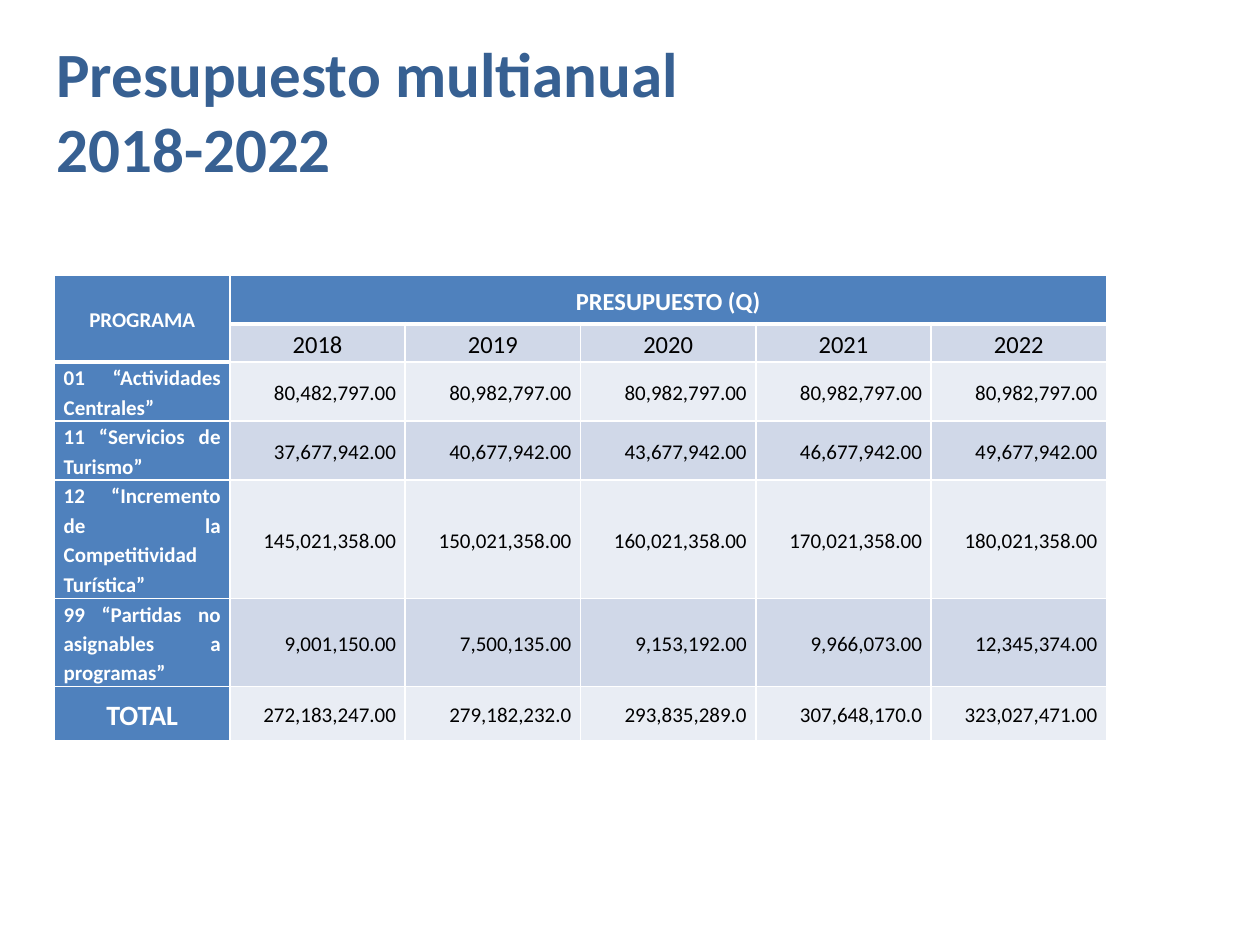
from pptx import Presentation
from pptx.dml.color import RGBColor
from pptx.enum.text import MSO_ANCHOR, PP_ALIGN
from pptx.oxml.ns import qn
from pptx.util import Pt
from lxml import etree

MIDDLE, TOP = MSO_ANCHOR.MIDDLE, MSO_ANCHOR.TOP
CENTER, RIGHT, JUSTIFY = PP_ALIGN.CENTER, PP_ALIGN.RIGHT, PP_ALIGN.JUSTIFY

FONT = "Calibri"
NAVY = RGBColor(0x37, 0x60, 0x92)
BLUE = RGBColor(0x4F, 0x81, 0xBD)
BAND_DARK = RGBColor(0xD0, 0xD8, 0xE8)
BAND_LIGHT = RGBColor(0xE9, 0xED, 0xF4)
WHITE = RGBColor(0xFF, 0xFF, 0xFF)
BLACK = RGBColor(0, 0, 0)

YEARS = ["2018", "2019", "2020", "2021", "2022"]
PROGRAMS = [
    ("01 “Actividades Centrales”", ["80,482,797.00"] + ["80,982,797.00"] * 4),
    ("11 “Servicios de Turismo”",
     ["37,677,942.00", "40,677,942.00", "43,677,942.00", "46,677,942.00", "49,677,942.00"]),
    ("12 “Incremento de la Competitividad Turística”",
     ["145,021,358.00", "150,021,358.00", "160,021,358.00", "170,021,358.00", "180,021,358.00"]),
    ("99 “Partidas no asignables a programas”",
     ["9,001,150.00", "7,500,135.00", "9,153,192.00", "9,966,073.00", "12,345,374.00"]),
    ("TOTAL",
     ["272,183,247.00", "279,182,232.0", "293,835,289.0", "307,648,170.0", "323,027,471.00"]),
]
ROW_HEIGHTS = [28, 21.6, 33.8, 33.8, 67.6, 50.5, 31]
COL_WIDTH = 100.2


def add_run(p, text, size, color, bold):
    r = p.add_run()
    r.text = text
    r.font.name, r.font.size, r.font.bold = FONT, Pt(size), bold
    r.font.color.rgb = color


def add_title(s, text):
    tf = s.shapes.add_textbox(Pt(25.2), Pt(15.1), Pt(375), Pt(95.3)).text_frame
    tf.word_wrap = True
    tf.vertical_anchor = MIDDLE
    add_run(tf.paragraphs[0], text, 36, NAVY, True)


def add_borders(cell, bottom):
    tc_pr = cell._tc.get_or_add_tcPr()
    for side, width in (("L", 1), ("R", 1), ("T", 1), ("B", bottom)):
        ln = etree.SubElement(tc_pr, qn(f"a:ln{side}"), w=str(Pt(width)))
        fill = etree.SubElement(ln, qn("a:solidFill"))
        etree.SubElement(fill, qn("a:srgbClr"), val=str(WHITE))


def style_cell(cell, fill, bottom=1):
    add_borders(cell, bottom)
    cell.fill.solid()
    cell.fill.fore_color.rgb = fill
    cell.margin_left = cell.margin_right = Pt(5.2)
    cell.margin_top = cell.margin_bottom = 0


def write_cell(cell, text, size, color, bold=False, align=CENTER, anchor=MIDDLE):
    cell.vertical_anchor = anchor
    p = cell.text_frame.paragraphs[0]
    p.alignment = align
    p.line_spacing = 1.15
    add_run(p, text, size, color, bold)


def add_budget_table(s):
    n_rows, n_cols = len(ROW_HEIGHTS), len(YEARS) + 1
    table = s.shapes.add_table(n_rows, n_cols, Pt(31.2), Pt(157.2),
                               Pt(COL_WIDTH * n_cols), Pt(sum(ROW_HEIGHTS))).table
    for col in table.columns:
        col.width = Pt(COL_WIDTH)
    for i, height in enumerate(ROW_HEIGHTS):
        table.rows[i].height = Pt(height)
        band = BAND_DARK if i % 2 else BAND_LIGHT
        for j in range(n_cols):
            header = i == 0 or (i, j) == (1, 0)
            style_cell(table.cell(i, j), BLUE if header or j == 0 else band,
                       3 if header else 1)

    table.cell(0, 0).merge(table.cell(1, 0))
    table.cell(0, 1).merge(table.cell(0, n_cols - 1))
    write_cell(table.cell(0, 0), "PROGRAMA", 12, WHITE, True)
    write_cell(table.cell(0, 1), "PRESUPUESTO (Q)", 14, WHITE, True)
    for j, year in enumerate(YEARS, 1):
        write_cell(table.cell(1, j), year, 14, BLACK)
    for i, (name, amounts) in enumerate(PROGRAMS, 2):
        if name == "TOTAL":
            write_cell(table.cell(i, 0), name, 16, WHITE, True)
        else:
            write_cell(table.cell(i, 0), name, 12, WHITE, True, JUSTIFY, TOP)
        for j, amount in enumerate(amounts, 1):
            write_cell(table.cell(i, j), amount, 12, BLACK, align=RIGHT)


def main():
    """Build the multi-year budget slide."""
    prs = Presentation()
    prs.slide_width, prs.slide_height = Pt(720), Pt(540)
    s = prs.slides.add_slide(prs.slide_layouts[6])
    add_title(s, "Presupuesto multianual 2018-2022")
    add_budget_table(s)
    prs.save("out.pptx")


if __name__ == "__main__":
    main()
